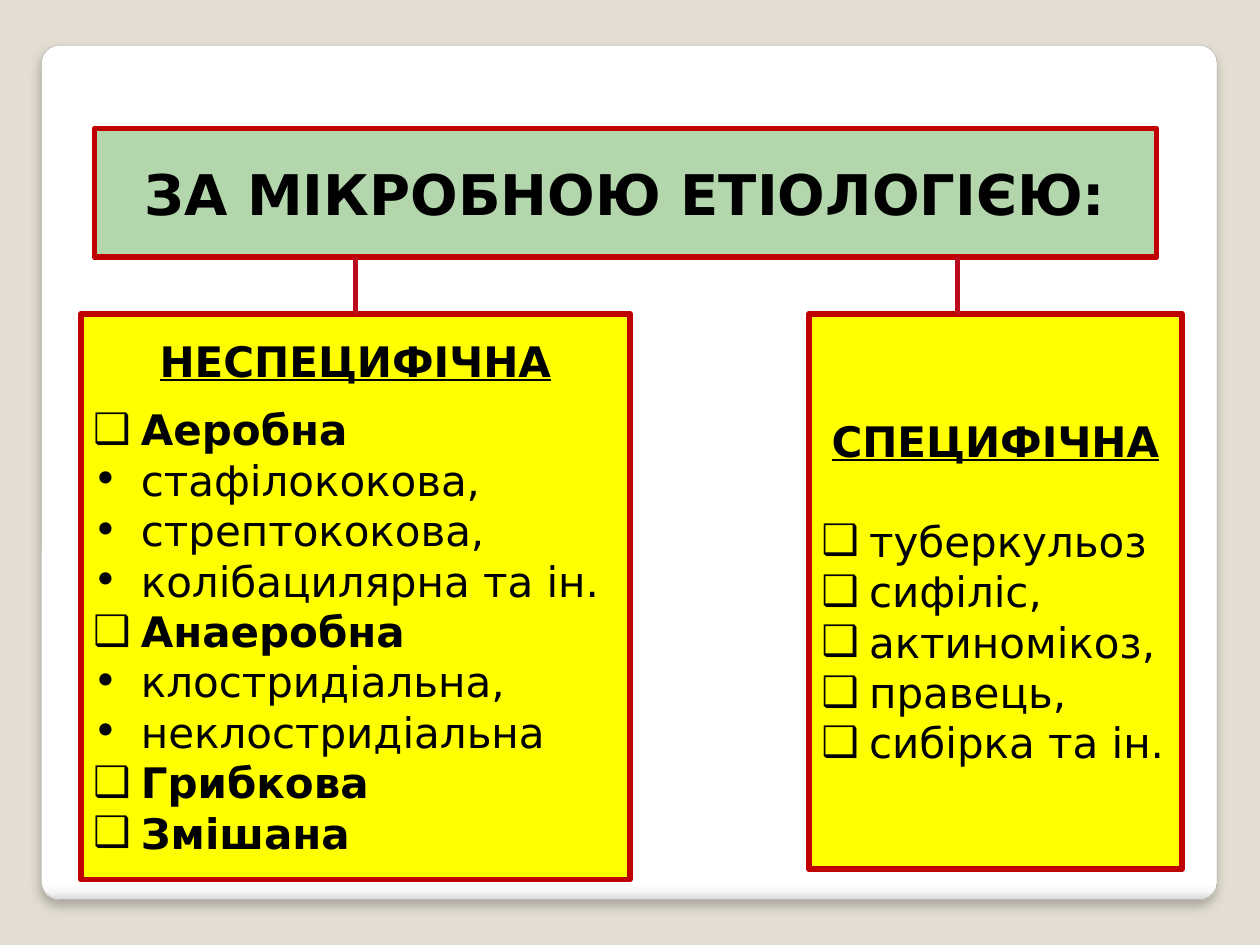
from lxml import etree
from pptx import Presentation, util as u
from pptx.dml.color import RGBColor
from pptx.enum import shapes, text
from pptx.oxml import parse_xml
from pptx.oxml.ns import qn

Inches, Pt = u.Inches, u.Pt
NAMESPACE = 'xmlns:a="http://schemas.openxmlformats.org/drawingml/2006/main"'
FONT = "DejaVu Sans"
INDENT = Inches(0.38)


def color(value):
    return RGBColor.from_string(value)


def add_box(left, top, width, height, fill, lines, size):
    """Add a red-framed box; each line is (text, bullet, bold)."""
    shape = slide.shapes.add_shape(
        shapes.MSO_SHAPE.RECTANGLE,
        Inches(left), Inches(top), Inches(width), Inches(height))
    shape.shadow.inherit = False
    shape.fill.solid()
    shape.fill.fore_color.rgb = color(fill)
    shape.line.color.rgb = color("C00000")
    shape.line.width = Pt(3.35)
    frame = shape.text_frame
    frame.word_wrap = True
    frame.vertical_anchor = text.MSO_ANCHOR.MIDDLE
    frame.text = "\n".join(line[0] for line in lines)
    for paragraph, (_, bullet, bold) in zip(frame.paragraphs, lines):
        paragraph.alignment = text.PP_ALIGN.LEFT if bullet else text.PP_ALIGN.CENTER
        if bullet:
            properties = paragraph._p.get_or_add_pPr()
            properties.set("marL", str(INDENT))
            properties.set("indent", str(-INDENT))
            etree.SubElement(properties, qn("a:buFont")).set("typeface", FONT)
            etree.SubElement(properties, qn("a:buChar")).set("char", bullet)
        font = paragraph.runs[0].font
        font.name = FONT
        font.size = Pt(size)
        font.bold = bold
        font.color.rgb = color("000000")
    return shape


presentation = Presentation()
presentation.slide_width, presentation.slide_height = Inches(10), Inches(7.5)
slide = presentation.slides.add_slide(presentation.slide_layouts[6])
slide.background.fill.solid()
slide.background.fill.fore_color.rgb = color("E3DED1")

# White rounded panel, shaded at its lower edge
panel = slide.shapes.add_shape(
    shapes.MSO_SHAPE.ROUNDED_RECTANGLE,
    Inches(0.33), Inches(0.36), Inches(9.33), Inches(6.78))
panel.adjustments[0] = 0.021
panel.line.color.rgb = color("A4A4A4")
panel.line.width = Pt(0.16)
panel.fill.gradient()
panel.fill.gradient_angle = 270
stops = panel._element.spPr.find(".//" + qn("a:gsLst"))
for stop in list(stops):
    stops.remove(stop)
for position, shade in ((0, "FFFFFF"), (98, "FFFFFF"), (99, "F7F7F7"), (100, "DADADA")):
    stops.append(parse_xml(
        f'<a:gs {NAMESPACE} pos="{position * 1000}"><a:srgbClr val="{shade}"/></a:gs>'))
panel.shadow.inherit = False
panel._element.spPr.find(qn("a:effectLst")).append(parse_xml(
    f'<a:outerShdw {NAMESPACE} blurRad="{Pt(6)}" dist="{Pt(4)}" dir="5400000" '
    'algn="t" rotWithShape="0"><a:srgbClr val="000000"><a:alpha val="25000"/>'
    '</a:srgbClr></a:outerShdw>'))

# Title
title = add_box(0.75, 1.02, 8.43, 1.02, "B3D6AC",
                [("ЗА МІКРОБНОЮ ЕТІОЛОГІЄЮ:", None, True)], 32)

# Two branches
nonspecific = add_box(0.64, 2.49, 4.36, 4.49, "FFFF00", [
    ("НЕСПЕЦИФІЧНА", None, True),
    ("Аеробна", "❑", True),
    ("стафілококова,", "•", False),
    ("стрептококова,", "•", False),
    ("колібацилярна та ін.", "•", False),
    ("Анаеробна", "❑", True),
    ("клостридіальна,", "•", False),
    ("неклостридіальна", "•", False),
    ("Грибкова", "❑", True),
    ("Змішана", "❑", True),
], 24)
diseases = ("туберкульоз", "сифіліс,", "актиномікоз,", "правець,", "сибірка та ін.")
specific = add_box(6.42, 2.49, 2.96, 4.41, "FFFF00",
                   [("СПЕЦИФІЧНА", None, True)]
                   + [(disease, "❑", False) for disease in diseases], 24)
for branch, gap in ((nonspecific, 10), (specific, 28)):
    heading = branch.text_frame.paragraphs[0]
    heading.space_after = Pt(gap)
    heading.runs[0].font.underline = True

# Lines from the title to the branches
connectors = []
for x in (2.82, 7.6):
    connector = slide.shapes.add_connector(
        shapes.MSO_CONNECTOR.STRAIGHT, Inches(x), Inches(2.04), Inches(x), Inches(2.49))
    connector.line.color.rgb = color("BC0B1F")
    connector.line.width = Pt(3)
    etree.SubElement(connector._element.spPr, qn("a:effectLst"))
    connectors.append(connector)
connectors[0].end_connect(nonspecific, 0)

presentation.save("out.pptx")
